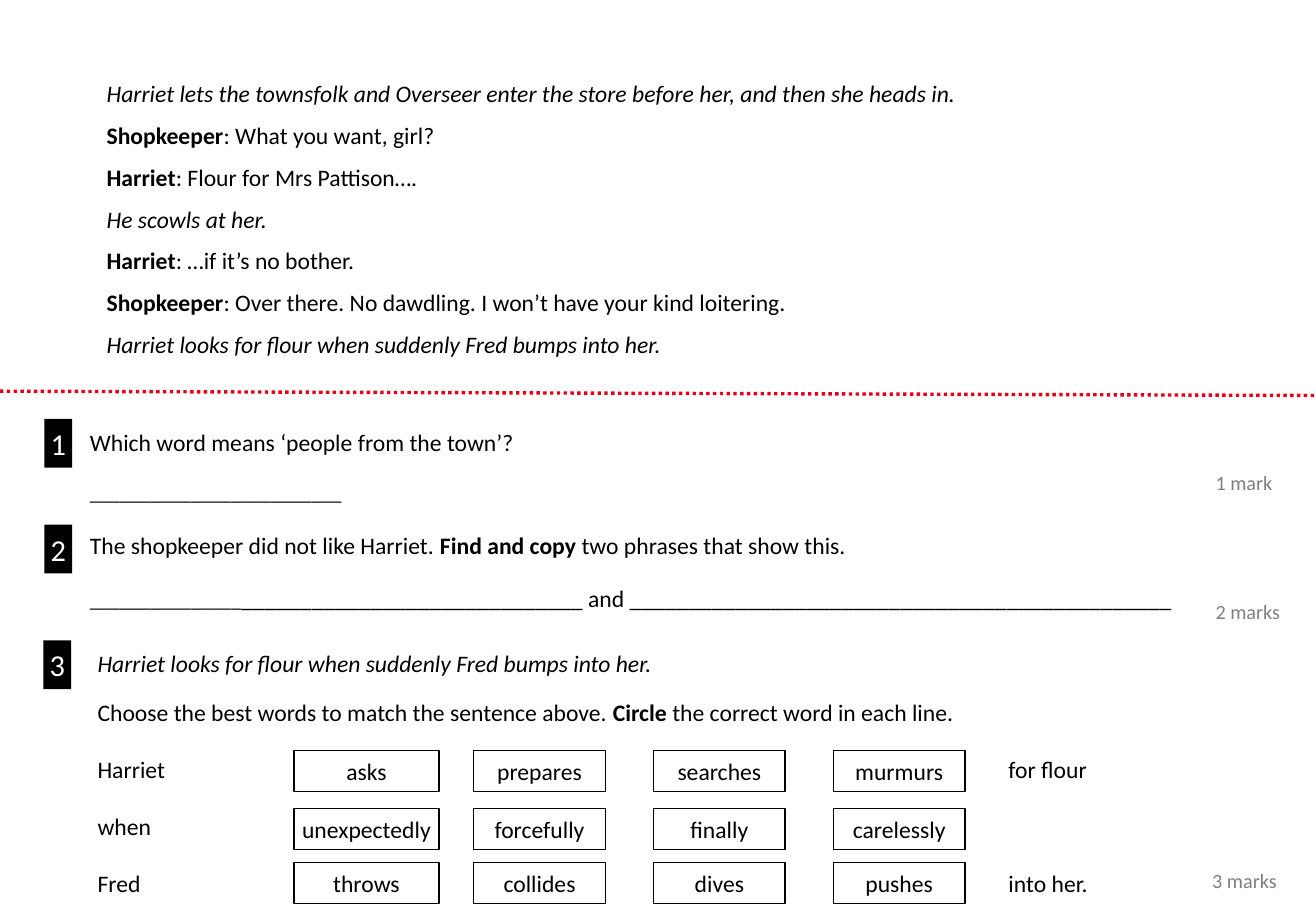
from lxml.etree import SubElement
from pptx import Presentation
from pptx.dml.color import RGBColor
from pptx.enum.dml import MSO_LINE as Dash
from pptx.enum.shapes import MSO_CONNECTOR as Conn, MSO_SHAPE as Shape
from pptx.enum.text import MSO_ANCHOR as Anchor, MSO_AUTO_SIZE as Auto, PP_ALIGN as Align
from pptx.oxml.ns import qn
from pptx.util import Cm, Pt

BLACK = RGBColor(0, 0, 0)
WHITE = RGBColor(255, 255, 255)
GREY = RGBColor(128, 128, 128)
RED = RGBColor(0xE4, 0x00, 0x18)
WIDE, HIGH = 27.52, 19.05
TAB = 19.05
BOLD, ITAL, SMALL = {"bold": True}, {"italic": True}, {"size": Pt(12)}


class Sheet:
    """Draws the parts of a reading worksheet on one slide."""

    def __init__(self, slide):
        self.slide = slide
        self.style = {"name": "Calibri", "size": Pt(14)}

    def fill_in(self, shape, paras, color=BLACK, inset=0.13, wrap=True, align=Align.LEFT,
                anchor=Anchor.TOP, before=(), after=0, tab=None, **fmt):
        frame = shape.text_frame
        look = {"word_wrap": wrap, "auto_size": Auto.SHAPE_TO_FIT_TEXT,
                "vertical_anchor": anchor, "margin_left": Cm(inset),
                "margin_right": Cm(inset), "margin_top": Cm(0.13),
                "margin_bottom": Cm(0.13)}
        for key, val in look.items():
            setattr(frame, key, val)
        for num, runs in enumerate(paras):
            para = frame.add_paragraph() if num else frame.paragraphs[0]
            para.alignment = align
            if num and before:
                para.space_before = Pt(before[num - 1])
            if after:
                para.space_after = Pt(after)
            if tab:
                tabs = SubElement(para._p.get_or_add_pPr(), qn("a:tabLst"))
                SubElement(tabs, qn("a:tab"), pos=str(Cm(tab)), algn="l")
            for text, extra in runs:
                run = para.add_run()
                run.text = text
                run.font.color.rgb = color
                for key, val in {**self.style, **fmt, **extra}.items():
                    setattr(run.font, key, val)

    def text(self, box, paras, **opts):
        shape = self.slide.shapes.add_textbox(*map(Cm, box))
        self.fill_in(shape, paras, **opts)

    def block(self, box, word, fill, line=None, **opts):
        shape = self.slide.shapes.add_shape(Shape.RECTANGLE, *map(Cm, box))
        shape.shadow.inherit = False
        shape.fill.solid()
        shape.fill.fore_color.rgb = fill
        if line is None:
            shape.line.fill.background()
        else:
            shape.line.color.rgb = line
            shape.line.width = Pt(0.75)
        self.fill_in(shape, [[(word, {})]], **opts)

    def badge(self, left, top, num):
        self.block((left, top, 0.58, 1.02), num, BLACK, color=WHITE, wrap=False, size=Pt(18))

    def choice(self, left, top, width, word):
        self.block((left, top, width, 0.86), word, WHITE, BLACK,
                   align=Align.CENTER, anchor=Anchor.MIDDLE)

    def mark(self, left, top, width, label):
        self.text((left, top, width, 0.76), [[(label, SMALL)]],
                  color=GREY, inset=0.25, wrap=False)

    def rule(self, *ends):
        line = self.slide.shapes.add_connector(Conn.STRAIGHT, *map(Cm, ends))
        for key, val in {"width": Pt(2), "dash_style": Dash.ROUND_DOT}.items():
            setattr(line.line, key, val)
        line.line.color.rgb = RED
        SubElement(line._element.spPr, qn("a:effectLst"))


def main():
    deck = Presentation()
    deck.slide_width, deck.slide_height = Cm(WIDE), Cm(HIGH)
    sheet = Sheet(deck.slides.add_slide(deck.slide_layouts[6]))

    bump = ("Harriet looks for flour when suddenly Fred bumps into her.", ITAL)
    play = [
        [("Harriet lets the townsfolk and Overseer enter the store before her, "
          "and then she heads in.", ITAL)],
        [("Shopkeeper", BOLD), (": What you want, girl?", {})],
        [("Harriet", BOLD), (": Flour for Mrs Pattison….", {})],
        [("He scowls at her.", ITAL)],
        [("Harriet", BOLD), (": …if it’s no bother.", {})],
        [("Shopkeeper", BOLD),
         (": Over there. No dawdling. I won’t have your kind loitering.", {})],
        [bump],
    ]
    sheet.text((1.98, 1.52, 22.71, 6.32), play, inset=0.25, after=8)
    sheet.rule(0, 8.18, WIDE, 8.27)

    for left, top, num in ((0.93, 8.76, "1"), (0.93, 10.97, "2"), (0.91, 13.39, "3")):
        sheet.badge(left, top, num)

    town = [[("Which word means ‘people from the town’?", {})],
            [("_" * 25, SMALL)]]
    sheet.text((1.75, 8.81, 23.57, 1.88), town, before=[14.65])

    dislike = [[("The shopkeeper did not like Harriet. ", {}), ("Find and copy ", BOLD),
                ("two phrases that show this.", {})],
               [("_" * 15, SMALL), ("_" * 29 + " and " + "_" * 46, {})]]
    sheet.text((1.75, 10.97, 23.57, 1.96), dislike, before=[14.65])

    match = [[bump],
             [("Choose the best words to match the sentence above. ", {}),
              ("Circle ", BOLD), ("the correct word in each line.", {})],
             [("Harriet\tfor flour", {})],
             [("when", {})],
             [("Fred\tinto her.", {})]]
    sheet.text((1.91, 13.44, 24.28, 5.49), match, before=[12, 17, 17, 17], tab=TAB)

    words = {15.7: ("asks", "prepares", "searches", "murmurs"),
             16.9: ("unexpectedly", "forcefully", "finally", "carelessly"),
             18.04: ("throws", "collides", "dives", "pushes")}
    for top, row in words.items():
        for col, word in enumerate(row):
            sheet.choice(6.15 + 3.76 * col, top, 2.75 if col else 3.03, word)

    for left, top, width, label in ((25.17, 9.7, 1.73, "1 mark"),
                                    (25.17, 12.4, 1.88, "2 marks"),
                                    (25.1, 18.03, 1.88, "3 marks")):
        sheet.mark(left, top, width, label)

    deck.save("out.pptx")


if __name__ == "__main__":
    main()
